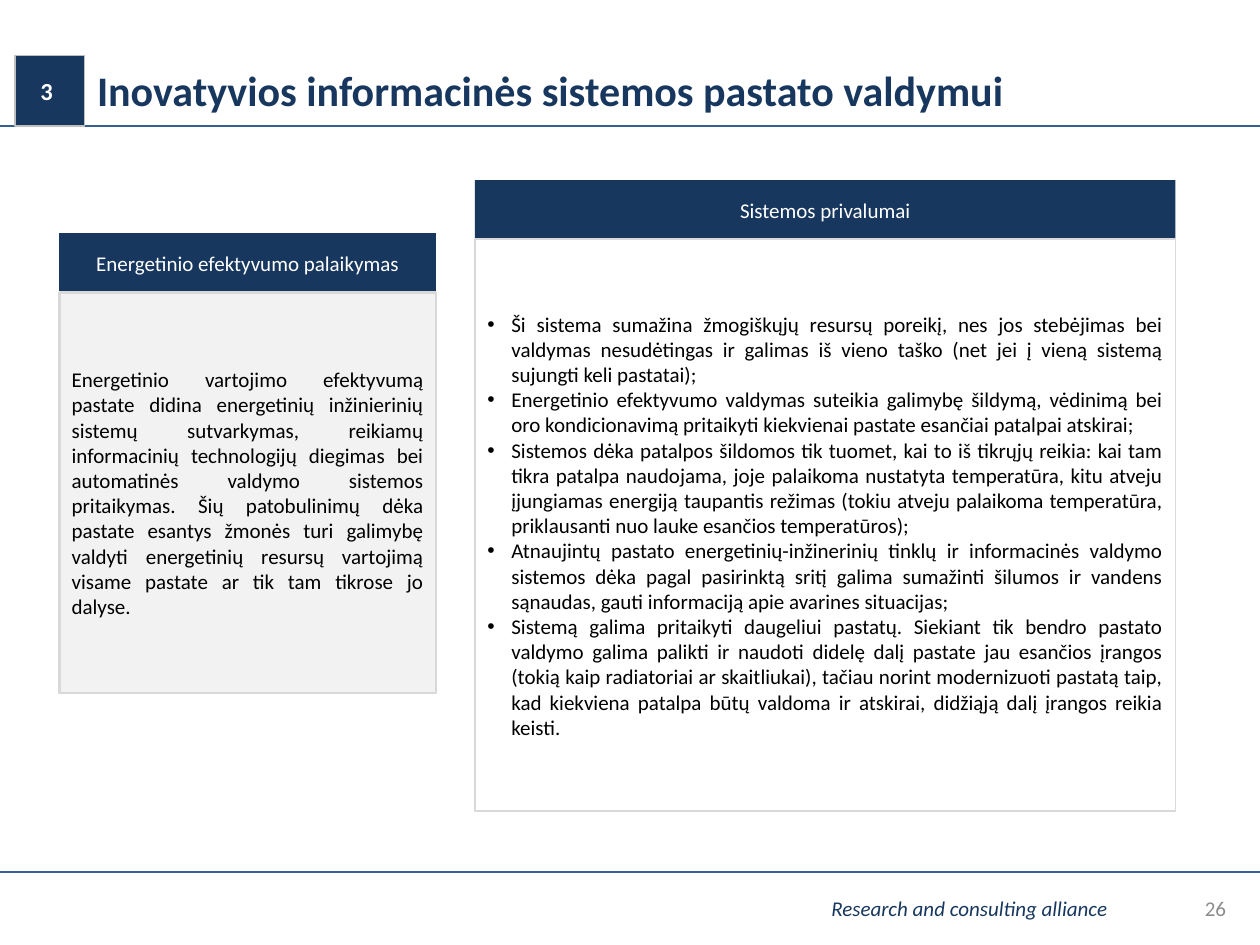
from lxml import etree
from pptx import Presentation
from pptx.dml.color import RGBColor
from pptx.enum.shapes import MSO_CONNECTOR as Connector, MSO_SHAPE as Shape
from pptx.enum.text import MSO_ANCHOR as Anchor, MSO_AUTO_SIZE as AutoSize, PP_ALIGN as Align
from pptx.oxml.ns import qn
from pptx.util import Inches, Pt

NAVY = RGBColor(0x17, 0x37, 0x5E)
BLUE = RGBColor(0x37, 0x60, 0x92)
WHITE = RGBColor(0xFF, 0xFF, 0xFF)
BLACK = RGBColor(0x00, 0x00, 0x00)
PALE = RGBColor(0xF2, 0xF2, 0xF2)
BORDER = RGBColor(0xD9, 0xD9, 0xD9)
SILVER = RGBColor(0xBF, 0xBF, 0xBF)
GRAY = RGBColor(0x8C, 0x8C, 0x8C)

HEADER_HEIGHT = 0.47
EFFICIENCY = [
    "Energetinio vartojimo efektyvumą pastate didina energetinių inžinierinių sistemų sutvarkymas, "
    "reikiamų informacinių technologijų diegimas bei automatinės valdymo sistemos pritaikymas. "
    "Šių patobulinimų dėka pastate esantys žmonės turi galimybę valdyti energetinių resursų "
    "vartojimą visame pastate ar tik tam tikrose jo dalyse.",
]
ADVANTAGES = [
    "Ši sistema sumažina žmogiškųjų resursų poreikį, nes jos stebėjimas bei valdymas nesudėtingas "
    "ir galimas iš vieno taško (net jei į vieną sistemą sujungti keli pastatai);",
    "Energetinio efektyvumo valdymas suteikia galimybę šildymą, vėdinimą bei oro kondicionavimą "
    "pritaikyti kiekvienai pastate esančiai patalpai atskirai;",
    "Sistemos dėka patalpos šildomos tik tuomet, kai to iš tikrųjų reikia: kai tam tikra patalpa "
    "naudojama, joje palaikoma nustatyta temperatūra, kitu atveju įjungiamas energiją taupantis "
    "režimas (tokiu atveju palaikoma temperatūra, priklausanti nuo lauke esančios temperatūros);",
    "Atnaujintų pastato energetinių-inžinerinių tinklų ir informacinės valdymo sistemos dėka pagal "
    "pasirinktą sritį galima sumažinti šilumos ir vandens sąnaudas, gauti informaciją apie avarines "
    "situacijas;",
    "Sistemą galima pritaikyti daugeliui pastatų. Siekiant tik bendro pastato valdymo galima palikti "
    "ir naudoti didelę dalį pastate jau esančios įrangos (tokią kaip radiatoriai ar skaitliukai), "
    "tačiau norint modernizuoti pastatą taip, kad kiekviena patalpa būtų valdoma ir atskirai, "
    "didžiąją dalį įrangos reikia keisti.",
]


class SlideBuilder:
    font_name = "Calibri"
    bullet_indent = Inches(0.19)

    def __init__(self, slide):
        self.slide = slide

    def set_text(self, shape, lines, color, size=12, align=Align.LEFT, bold=False, italic=False, bullets=False):
        frame = shape.text_frame
        frame.text = "\n".join(lines)
        frame.word_wrap = True
        frame.auto_size = AutoSize.NONE
        frame.vertical_anchor = Anchor.MIDDLE
        for paragraph in frame.paragraphs:
            paragraph.alignment = align
            if bullets:
                self.add_bullet(paragraph)
            for run in paragraph.runs:
                font = run.font
                font.name, font.size = self.font_name, Pt(size)
                font.bold, font.italic = bold, italic
                font.color.rgb = color

    def add_bullet(self, paragraph):
        properties = paragraph._p.get_or_add_pPr()
        properties.set("marL", str(self.bullet_indent))
        properties.set("indent", str(-self.bullet_indent))
        etree.SubElement(properties, qn("a:buFont")).set("typeface", "Arial")
        etree.SubElement(properties, qn("a:buChar")).set("char", "•")

    def title(self, text, left, top, width, height):
        title = self.slide.shapes.title
        title.left, title.top = Inches(left), Inches(top)
        title.width, title.height = Inches(width), Inches(height)
        self.set_text(title, [text], NAVY, size=24, bold=True)

    def rule(self, top):
        line = self.slide.shapes.add_connector(
            Connector.STRAIGHT, Inches(0), Inches(top), Inches(10), Inches(top))
        line.line.color.rgb = BLUE
        line.line.width = Pt(1)
        etree.SubElement(line._element.spPr, qn("a:effectLst"))

    def label(self, text, left, top, width, height, color, **style):
        box = self.slide.shapes.add_textbox(Inches(left), Inches(top), Inches(width), Inches(height))
        self.set_text(box, [text], color, **style)

    def rectangle(self, left, top, width, height, fill, border=None, border_width=1):
        shape = self.slide.shapes.add_shape(
            Shape.RECTANGLE, Inches(left), Inches(top), Inches(width), Inches(height))
        shape.shadow.inherit = False
        shape.fill.solid()
        shape.fill.fore_color.rgb = fill
        if border is None:
            shape.line.fill.background()
        else:
            shape.line.color.rgb = border
            shape.line.width = Pt(border_width)
        return shape

    def panel(self, heading, lines, left, top, width, body_height, fill, border_width, bullets=False):
        header = self.rectangle(left, top, width, HEADER_HEIGHT, NAVY)
        self.set_text(header, [heading], WHITE, align=Align.CENTER)
        body = self.rectangle(left, top + HEADER_HEIGHT, width, body_height, fill, BORDER, border_width)
        self.set_text(body, lines, BLACK, align=Align.JUSTIFY, bullets=bullets)

    def badge(self, text, left, top, width, height):
        badge = self.rectangle(left, top, width, height, NAVY, SILVER)
        badge.text_frame.margin_left = Inches(0.2)
        self.set_text(badge, [text], WHITE, size=14, bold=True)


def main():
    presentation = Presentation()
    presentation.slide_width, presentation.slide_height = Inches(10), Inches(7.5)
    slide = presentation.slides.add_slide(presentation.slide_layouts[5])
    builder = SlideBuilder(slide)

    for top in (1, 6.92):
        builder.rule(top)
    builder.label("Research and consulting alliance", 6.5, 7.06, 3.46, 0.29, NAVY, italic=True)
    builder.label("26", 7.5, 7.01, 2.33, 0.4, GRAY, align=Align.RIGHT)
    builder.title("Inovatyvios informacinės sistemos pastato valdymui", 0.67, 0.45, 8.72, 0.53)
    builder.panel("Energetinio efektyvumo palaikymas", EFFICIENCY, 0.47, 1.85, 2.99, 3.18, PALE, 1.5)
    builder.panel("Sistemos privalumai", ADVANTAGES, 3.77, 1.43, 5.56, 4.54, WHITE, 1, bullets=True)
    builder.badge("3", 0.12, 0.44, 0.55, 0.56)

    presentation.save("out.pptx")


if __name__ == "__main__":
    main()
